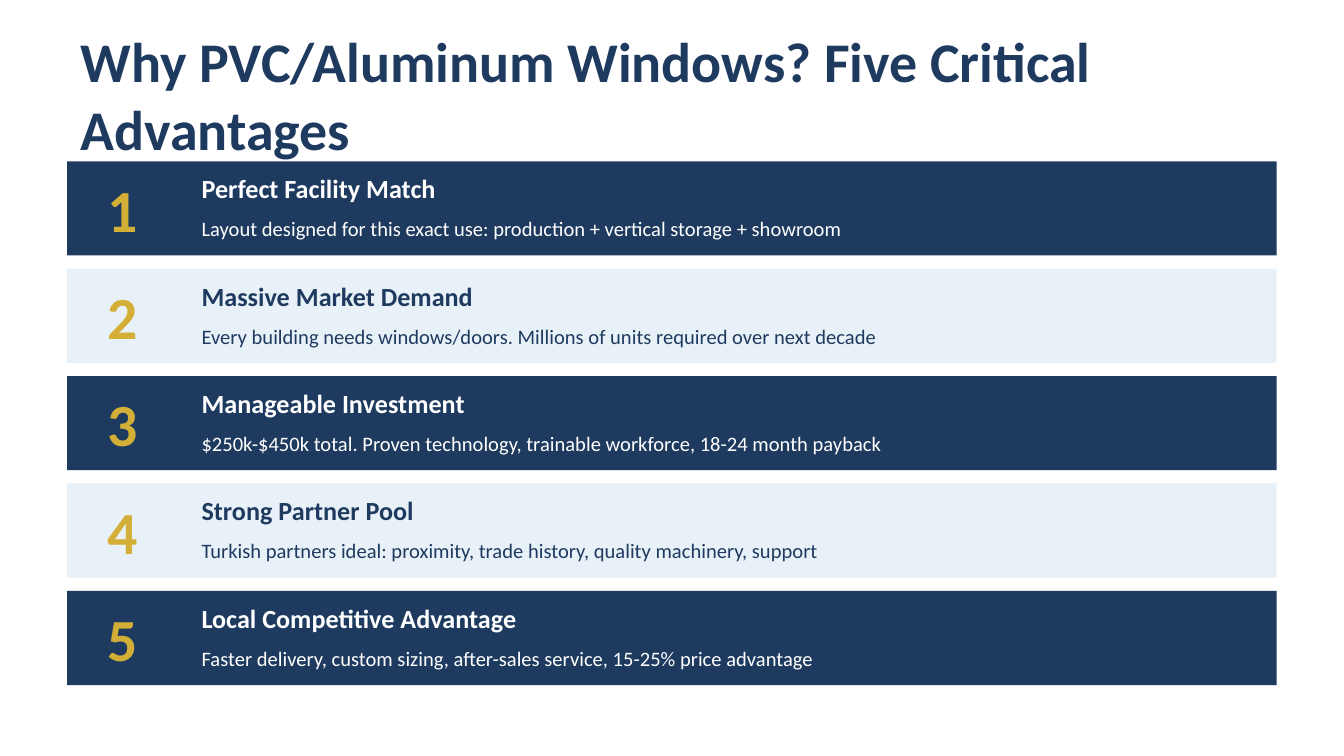
from pptx import Presentation
from pptx.dml.color import RGBColor
from pptx.enum.shapes import MSO_SHAPE as Shape
from pptx.enum.text import MSO_ANCHOR as Anchor, MSO_AUTO_SIZE as AutoSize, PP_ALIGN as Align
from pptx.util import Cm, Pt

NAVY = RGBColor(0x1E, 0x3A, 0x5F)
PALE = RGBColor(0xE8, 0xF1, 0xF8)
GOLD = RGBColor(0xD4, 0xAF, 0x37)
WHITE = RGBColor(0xFF, 0xFF, 0xFF)

MARGIN = 1.27
BAND_WIDTH = 22.86
BAND_HEIGHT = 1.78
FIRST_TOP = 3.05
PITCH = 2.03

ADVANTAGES = [
    ("Perfect Facility Match",
     "Layout designed for this exact use: production + vertical storage + showroom"),
    ("Massive Market Demand",
     "Every building needs windows/doors. Millions of units required over next decade"),
    ("Manageable Investment",
     "$250k-$450k total. Proven technology, trainable workforce, 18-24 month payback"),
    ("Strong Partner Pool",
     "Turkish partners ideal: proximity, trade history, quality machinery, support"),
    ("Local Competitive Advantage",
     "Faster delivery, custom sizing, after-sales service, 15-25% price advantage"),
]


class SlideBuilder:
    font = "Calibri"

    def __init__(self, slide):
        self.slide = slide

    def fill_frame(self, frame, wording, size, color, bold):
        frame.word_wrap = True
        frame.auto_size = AutoSize.NONE
        frame.vertical_anchor = Anchor.MIDDLE
        paragraph = frame.paragraphs[0]
        paragraph.alignment = Align.LEFT
        run = paragraph.add_run()
        run.text = wording
        run.font.name = self.font
        run.font.size = Pt(size)
        run.font.bold = bold
        run.font.color.rgb = color

    def title(self, wording, left, top, width, height):
        heading = self.slide.shapes.title
        heading.left, heading.top = Cm(left), Cm(top)
        heading.width, heading.height = Cm(width), Cm(height)
        self.fill_frame(heading.text_frame, wording, 30, NAVY, True)

    def band(self, left, top, width, height, color):
        band = self.slide.shapes.add_shape(
            Shape.RECTANGLE, Cm(left), Cm(top), Cm(width), Cm(height))
        band.shadow.inherit = False
        band.fill.solid()
        band.fill.fore_color.rgb = color
        band.line.fill.background()

    def text(self, wording, left, top, width, height, size, color, bold=False):
        label = self.slide.shapes.add_textbox(Cm(left), Cm(top), Cm(width), Cm(height))
        self.fill_frame(label.text_frame, wording, size, color, bold)

    def advantage(self, number, heading, detail):
        top = FIRST_TOP + (number - 1) * PITCH
        fill, ink = (NAVY, WHITE) if number % 2 else (PALE, NAVY)
        self.band(MARGIN, top, BAND_WIDTH, BAND_HEIGHT, fill)
        self.text(str(number), 1.78, top + 0.25, 1.27, 1.27, 32, GOLD, True)
        self.text(heading, 3.56, top + 0.13, 20.32, 0.76, 14, ink, True)
        self.text(detail, 3.56, top + 0.89, 20.32, 0.76, 11, ink)


def main():
    deck = Presentation()
    deck.slide_width, deck.slide_height = Cm(25.4), Cm(14.29)
    builder = SlideBuilder(deck.slides.add_slide(deck.slide_layouts[5]))
    builder.title("Why PVC/Aluminum Windows? Five Critical Advantages",
                  MARGIN, 1.02, BAND_WIDTH, 1.52)
    for number, (heading, detail) in enumerate(ADVANTAGES, 1):
        builder.advantage(number, heading, detail)
    deck.save("out.pptx")


if __name__ == "__main__":
    main()
